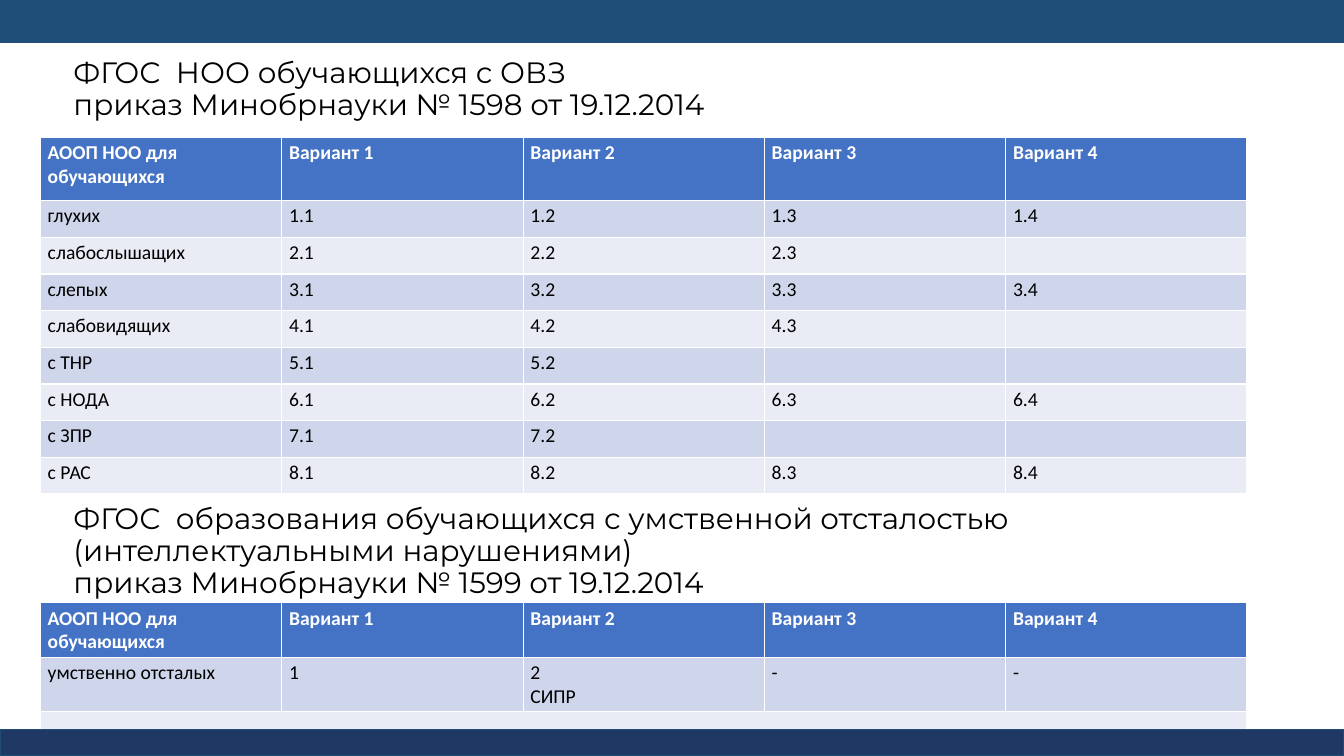
from lxml.etree import SubElement
from pptx import Presentation
from pptx.dml.color import RGBColor
from pptx.enum.shapes import MSO_SHAPE
from pptx.enum.text import MSO_ANCHOR
from pptx.oxml.ns import qn
from pptx.util import Pt

COLORS = {
    "text": "000000",
    "white": "FFFFFF",
    "header": "4472C4",
    "odd_row": "CFD5EA",
    "even_row": "E9EBF5",
    "top_bar": "1F4E79",
    "bottom_bar": "203864",
}
HEADER = ["АООП НОО для обучающихся"] + [f"Вариант {n}" for n in range(1, 5)]
COLUMN_WIDTH = 172.4


def color(name):
    return RGBColor.from_string(COLORS[name])


def style(paragraph, font_name, size, color_name, bold=False):
    font = paragraph.font
    font.name, font.size, font.bold = font_name, Pt(size), bold
    font.color.rgb = color(color_name)


prs = Presentation()
prs.slide_width, prs.slide_height = Pt(960), Pt(540)
slide = prs.slides.add_slide(prs.slide_layouts[6])

# Learner group and the number of programme variants open to it
groups = [
    ("глухих", "1234"),
    ("слабослышащих", "123"),
    ("слепых", "1234"),
    ("слабовидящих", "123"),
    ("с ТНР", "12"),
    ("с НОДА", "1234"),
    ("с ЗПР", "12"),
    ("с РАС", "1234"),
]
group_rows = [
    [group] + [f"{number}.{v}" if v in variants else "" for v in "1234"]
    for number, (group, variants) in enumerate(groups, start=1)
]
disability_rows = [["умственно отсталых", "1", "2\nСИПР", "-", "-"], [""] * 5]

# Heading, its top and height, table rows, table top, row heights
standards = [
    ("ФГОС  НОО обучающихся с ОВЗ \vприказ Минобрнауки № 1598 от 19.12.2014",
     35.3, 57.6, group_rows, 97.9, [45.4] + [26.2] * 8),
    ("ФГОС  образования обучающихся с умственной отсталостью "
     "(интеллектуальными нарушениями)\vприказ Минобрнауки № 1599 от 19.12.2014",
     362.9, 62.6, disability_rows, 430.6, [36.7, 36.7, 20.9]),
]

for heading, heading_top, heading_height, body, table_top, heights in standards:
    heading_box = slide.shapes.add_textbox(
        Pt(45.4), Pt(heading_top), Pt(752.4), Pt(heading_height))
    frame = heading_box.text_frame
    frame.word_wrap = True
    frame.vertical_anchor = MSO_ANCHOR.MIDDLE
    frame.text = heading
    frame.paragraphs[0].line_spacing = 0.9
    style(frame.paragraphs[0], "Montserrat", 21, "text")

    rows = [HEADER] + body
    table = slide.shapes.add_table(
        len(rows), len(HEADER), Pt(28.9), Pt(table_top),
        Pt(COLUMN_WIDTH * len(HEADER)), Pt(sum(heights))).table
    for column in table.columns:
        column.width = Pt(COLUMN_WIDTH)
    for r, (values, height) in enumerate(zip(rows, heights)):
        table.rows[r].height = Pt(height)
        is_header = r == 0
        fill = "header" if is_header else "odd_row" if r % 2 else "even_row"
        for c, value in enumerate(values):
            cell = table.cell(r, c)
            cell.fill.solid()
            cell.fill.fore_color.rgb = color(fill)
            cell.margin_left = cell.margin_right = Pt(5.2)
            cell.margin_top = cell.margin_bottom = Pt(2.6)
            cell.text = value
            for paragraph in cell.text_frame.paragraphs:
                style(paragraph, "Calibri", 14, "white" if is_header else "text", is_header)
                if not value:
                    # An empty cell takes its text height from the end mark
                    SubElement(paragraph._p, qn("a:endParaRPr"), sz="1400")
        if not any(values):
            table.cell(r, 0).merge(table.cell(r, len(HEADER) - 1))

for bar_top, bar_height, bar_color in [(521.3, 18.7, "bottom_bar"), (-22.3, 52.6, "top_bar")]:
    bar = slide.shapes.add_shape(
        MSO_SHAPE.RECTANGLE, 0, Pt(bar_top), prs.slide_width, Pt(bar_height))
    bar.shadow.inherit = False
    bar.fill.solid()
    bar.fill.fore_color.rgb = color(bar_color)
    bar.line.color.rgb = color("top_bar")
    bar.line.width = Pt(1)

prs.save("out.pptx")
